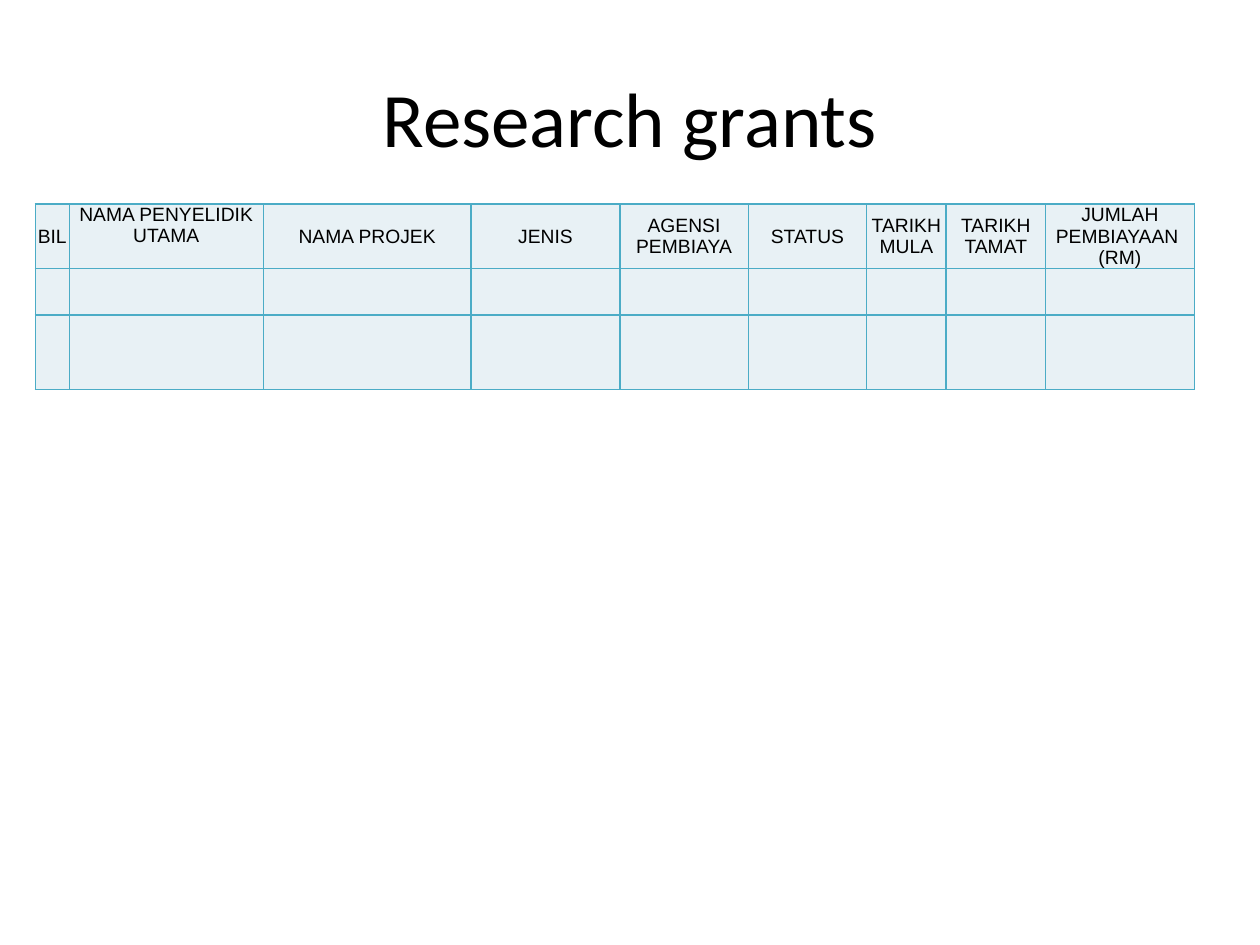
from dataclasses import dataclass

from lxml import etree
from pptx import Presentation
from pptx.dml.color import RGBColor
from pptx.enum.text import MSO_ANCHOR, PP_ALIGN
from pptx.oxml.ns import qn
from pptx.util import Inches, Pt

CENTER = PP_ALIGN.CENTER
TOP, MIDDLE = MSO_ANCHOR.TOP, MSO_ANCHOR.MIDDLE
TITLE_ONLY = 5

# Heading, column width, vertical anchor
COLUMNS = [
    ("BIL", 0.27, MIDDLE),
    ("NAMA PENYELIDIK UTAMA", 1.54, TOP),
    ("NAMA PROJEK", 1.65, MIDDLE),
    ("JENIS", 1.18, MIDDLE),
    ("AGENSI PEMBIAYA", 1.02, MIDDLE),
    ("STATUS", 0.94, MIDDLE),
    ("TARIKH MULA", 0.63, MIDDLE),
    ("TARIKH TAMAT", 0.79, MIDDLE),
    ("JUMLAH PEMBIAYAAN \v(RM)", 1.18, MIDDLE),
]
ROW_HEIGHTS = [0.51, 0.37, 0.59]


@dataclass(frozen=True)
class Theme:
    title_font: str = "Calibri"
    table_font: str = "Arial"
    title_size: int = 44
    table_size: int = 11
    text: str = "000000"
    cell_fill: str = "E8F1F5"
    border: str = "4BACC6"
    border_width: int = 1


class SlideBuilder:
    def __init__(self, slide, theme):
        self.slide = slide
        self.theme = theme

    def format_text(self, tf, font, size):
        for p in tf.paragraphs:
            p.alignment = CENTER
            for r in p.runs:
                r.font.name = font
                r.font.size = Pt(size)
                r.font.color.rgb = RGBColor.from_string(self.theme.text)

    def title(self, text, left, top, width, height):
        s = self.slide.shapes.title
        s.left, s.top = Inches(left), Inches(top)
        s.width, s.height = Inches(width), Inches(height)
        tf = s.text_frame
        tf.text = text
        tf.vertical_anchor = MIDDLE
        self.format_text(tf, self.theme.title_font, self.theme.title_size)

    def border(self, cell):
        tc_pr = cell._tc.get_or_add_tcPr()
        for i, side in enumerate(("a:lnL", "a:lnR", "a:lnT", "a:lnB")):
            ln = etree.Element(qn(side), w=str(Pt(self.theme.border_width)))
            fill = etree.SubElement(ln, qn("a:solidFill"))
            etree.SubElement(fill, qn("a:srgbClr"), val=self.theme.border)
            tc_pr.insert(i, ln)

    def style_cell(self, cell):
        cell.margin_left = cell.margin_right = 0
        cell.margin_top = cell.margin_bottom = 0
        cell.fill.solid()
        cell.fill.fore_color.rgb = RGBColor.from_string(self.theme.cell_fill)
        self.border(cell)

    def table(self, columns, row_heights, left, top):
        """Add a table with one heading row above empty rows."""
        width = sum(w for _, w, _ in columns)
        table = self.slide.shapes.add_table(
            len(row_heights), len(columns), Inches(left), Inches(top),
            Inches(width), Inches(sum(row_heights))).table
        for row, height in zip(table.rows, row_heights):
            row.height = Inches(height)
        for cell in table.iter_cells():
            self.style_cell(cell)
        for i, (heading, col_width, anchor) in enumerate(columns):
            table.columns[i].width = Inches(col_width)
            cell = table.cell(0, i)
            cell.vertical_anchor = anchor
            tf = cell.text_frame
            tf.paragraphs[0].text = heading
            self.format_text(tf, self.theme.table_font, self.theme.table_size)


def main():
    prs = Presentation()
    prs.slide_width, prs.slide_height = Inches(10), Inches(7.5)
    slide = prs.slides.add_slide(prs.slide_layouts[TITLE_ONLY])
    builder = SlideBuilder(slide, Theme())
    builder.title("Research grants", 0.5, 0.3, 9, 1.25)
    builder.table(COLUMNS, ROW_HEIGHTS, 0.28, 1.62)
    prs.save("out.pptx")


if __name__ == "__main__":
    main()
